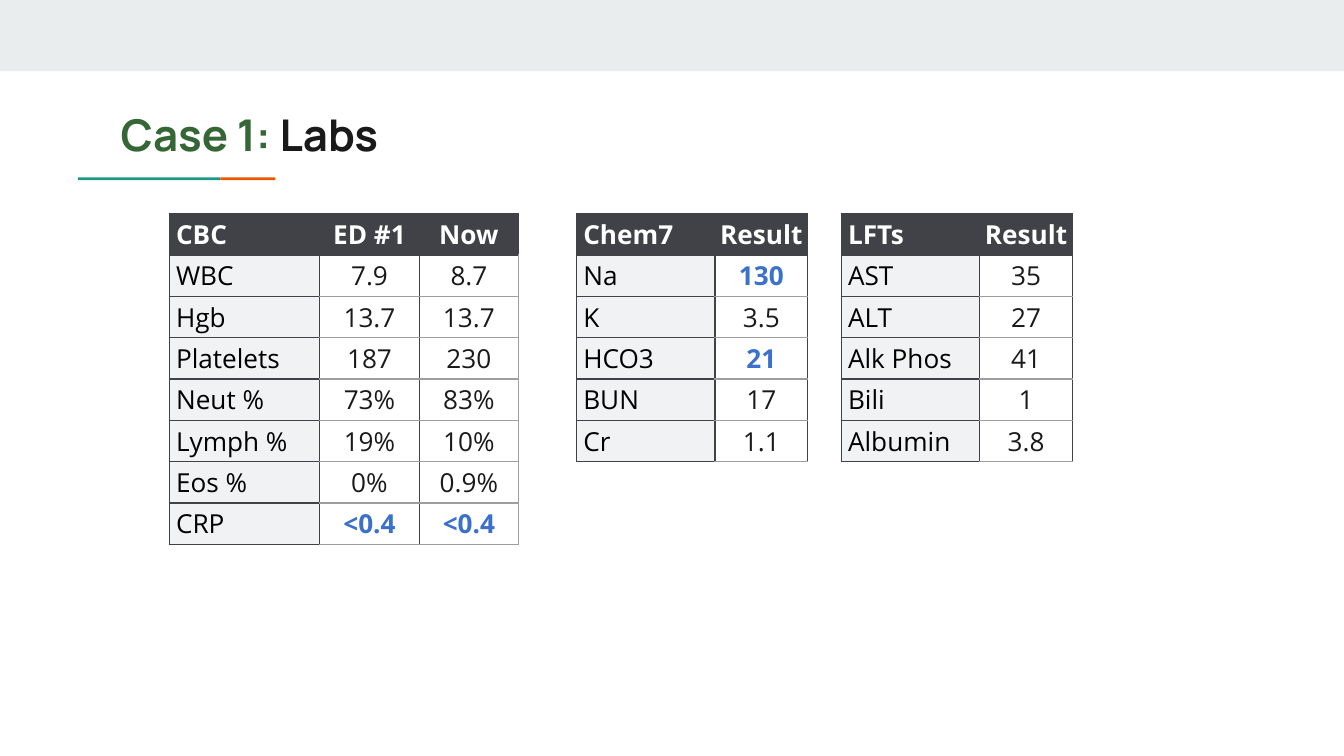
from dataclasses import dataclass

from lxml import etree
from pptx import Presentation
from pptx import util as u
from pptx.dml.color import RGBColor
from pptx.enum import shapes, text
from pptx.oxml.ns import qn


@dataclass(frozen=True)
class Theme:
    title_font: str = "Manrope"
    table_font: str = "Open Sans"
    title_size: float = 23.4
    table_size: float = 14
    band: str = "E9EDEE"
    teal: str = "1A9988"
    orange: str = "EB5600"
    green: str = "356635"
    ink: str = "1A1A1A"
    black: str = "000000"
    white: str = "FFFFFF"
    dark: str = "404247"
    pale: str = "F1F2F3"
    grey: str = "9E9E9E"
    abnormal: str = "3B71CA"
    thin: float = 0.75
    thick: float = 1.5


THEME = Theme()
WIDTH = 10
HEIGHT = WIDTH * 9 / 16
TABLE_TOP = 1.59
ROW_HEIGHT = 2.46 / 8

TITLE = [("Case 1:", THEME.green), (" Labs", THEME.ink)]

# left, top, width, height, colour
BARS = [
    (0, 0, WIDTH, 0.53, THEME.band),
    (0.58, 1.32, 1.06, 0.02, THEME.teal),
    (1.64, 1.32, 0.41, 0.02, THEME.orange),
]

LABS = [
    {
        "left": 1.26, "columns": [1.12, 0.74, 0.74], "right_edge": THEME.grey,
        "abnormal": {"<0.4"},
        "rows": [
            ("CBC", "ED #1", "Now"),
            ("WBC", "7.9", "8.7"),
            ("Hgb", "13.7", "13.7"),
            ("Platelets", "187", "230"),
            ("Neut %", "73%", "83%"),
            ("Lymph %", "19%", "10%"),
            ("Eos %", "0%", "0.9%"),
            ("CRP", "<0.4", "<0.4"),
        ],
    },
    {
        "left": 4.29, "columns": [1.03, 0.69], "right_edge": THEME.dark,
        "abnormal": {"130", "21"},
        "rows": [
            ("Chem7", "Result"),
            ("Na", "130"),
            ("K", "3.5"),
            ("HCO3", "21"),
            ("BUN", "17"),
            ("Cr", "1.1"),
        ],
    },
    {
        "left": 6.26, "columns": [1.03, 0.69], "right_edge": THEME.dark,
        "abnormal": set(),
        "rows": [
            ("LFTs", "Result"),
            ("AST", "35"),
            ("ALT", "27"),
            ("Alk Phos", "41"),
            ("Bili", "1"),
            ("Albumin", "3.8"),
        ],
    },
]


def add_run(paragraph, words, font, size, colour, bold):
    run = paragraph.add_run()
    run.text = words
    run.font.name = font
    run.font.size = u.Pt(size)
    run.font.bold = bold
    run.font.color.rgb = RGBColor.from_string(colour)


def add_bar(slide, left, top, width, height, colour):
    bar = slide.shapes.add_shape(
        shapes.MSO_SHAPE.RECTANGLE, *map(u.Inches, (left, top, width, height)))
    bar.shadow.inherit = False
    bar.fill.solid()
    bar.fill.fore_color.rgb = RGBColor.from_string(colour)
    bar.line.fill.background()


def add_title(slide):
    box = slide.shapes.add_textbox(*map(u.Inches, (0.8, 0.7, 8.41, 0.59)))
    frame = box.text_frame
    frame.word_wrap = True
    frame.margin_left = frame.margin_right = u.Inches(0.1)
    frame.margin_top = frame.margin_bottom = u.Inches(0.1)
    for words, colour in TITLE:
        add_run(frame.paragraphs[0], words, THEME.title_font,
                THEME.title_size, colour, True)


def set_borders(cell, borders):
    """Put (colour, points) lines on the left, right, top and bottom, before the fill."""
    properties = cell._tc.get_or_add_tcPr()
    for index, (side, (colour, points)) in enumerate(zip("LRTB", borders)):
        line = etree.Element(qn(f"a:ln{side}"), w=str(u.Pt(points)))
        fill = etree.SubElement(line, qn("a:solidFill"))
        etree.SubElement(fill, qn("a:srgbClr"), val=colour)
        properties.insert(index, line)


def style_cell(cell, words, row, column, lab):
    header, label = row == 0, column == 0
    abnormal = words in lab["abnormal"]
    cell.vertical_anchor = text.MSO_ANCHOR.MIDDLE
    cell.margin_left = u.Inches(0.05 if label else 0)
    cell.margin_right = cell.margin_top = cell.margin_bottom = 0

    if header or label:
        cell.fill.solid()
        cell.fill.fore_color.rgb = RGBColor.from_string(
            THEME.dark if header else THEME.pale)
    else:
        cell.fill.background()

    colour = (THEME.white if header else THEME.black if label
              else THEME.abnormal if abnormal else THEME.ink)
    paragraph = cell.text_frame.paragraphs[0]
    paragraph.alignment = text.PP_ALIGN.LEFT if label else text.PP_ALIGN.CENTER
    add_run(paragraph, words, THEME.table_font, THEME.table_size,
            colour, header or abnormal)

    dark = (THEME.dark, THEME.thin)
    under_header = (THEME.dark, THEME.thick)
    between = dark if header or label else (THEME.grey, THEME.thin)
    last = column == len(lab["columns"]) - 1
    right = (lab["right_edge"], THEME.thin) if last and not header else dark
    top = under_header if row == 1 else between
    bottom = under_header if header else between
    set_borders(cell, (dark, right, top, bottom))


def add_lab_table(slide, lab):
    rows, columns = lab["rows"], lab["columns"]
    table = slide.shapes.add_table(
        len(rows), len(columns), u.Inches(lab["left"]), u.Inches(TABLE_TOP),
        u.Inches(sum(columns)), u.Inches(ROW_HEIGHT * len(rows))).table
    table.first_row = table.horz_banding = False
    for column, width in zip(table.columns, columns):
        column.width = u.Inches(width)
    for row, values in enumerate(rows):
        table.rows[row].height = u.Inches(ROW_HEIGHT)
        for column, words in enumerate(values):
            style_cell(table.cell(row, column), words, row, column, lab)


def main():
    presentation = Presentation()
    presentation.slide_width = u.Inches(WIDTH)
    presentation.slide_height = u.Inches(HEIGHT)
    slide = presentation.slides.add_slide(presentation.slide_layouts[6])
    for bar in BARS:
        add_bar(slide, *bar)
    add_title(slide)
    for lab in LABS:
        add_lab_table(slide, lab)
    presentation.save("out.pptx")


if __name__ == "__main__":
    main()
